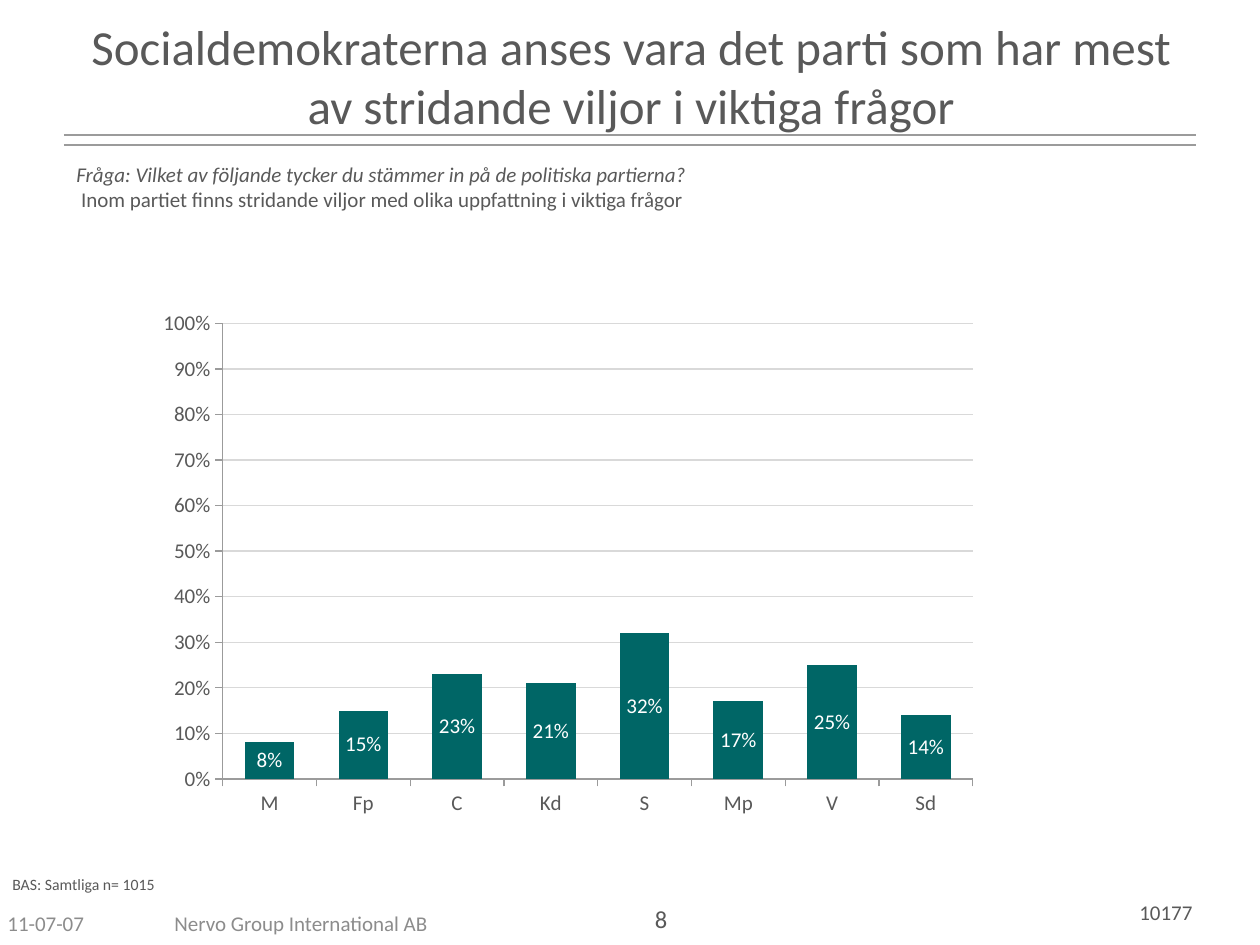
from dataclasses import dataclass

import pptx
import pptx.chart.data
import pptx.dml.color
import pptx.enum.chart
import pptx.enum.shapes
import pptx.enum.text
import pptx.oxml
import pptx.oxml.ns
import pptx.util

SCALE = 914400 / 126  # EMU in one px
Align = pptx.enum.text.PP_ALIGN
Anchor = pptx.enum.text.MSO_ANCHOR


@dataclass(frozen=True)
class Theme:
    face: str = "Calibri"
    ink: str = "595959"
    muted: str = "8C8C8C"
    rule: str = "9B9B9B"
    grid: str = "D9D9D9"
    bar: str = "006666"
    white: str = "FFFFFF"
    title: int = 28
    page: int = 14
    body: int = 12
    note: int = 9


THEME = Theme()


@dataclass(frozen=True)
class Label:
    text: str
    left: int
    top: int
    width: int
    height: int
    size: int = THEME.body
    color: str = THEME.ink
    align: Align = Align.LEFT
    anchor: Anchor = Anchor.TOP


LABELS = [
    Label("10177", 877, 893, 328, 38, align=Align.RIGHT),
    Label("11-07-07", -5, 898, 294, 50, color=THEME.muted, anchor=Anchor.MIDDLE),
    Label("Nervo Group International AB", 101, 898, 400, 50, color=THEME.muted,
          align=Align.CENTER, anchor=Anchor.MIDDLE),
    Label("8", 514, 898, 294, 50, THEME.page, align=Align.CENTER),
    Label("Socialdemokraterna anses vara det parti som har mest "
          "av stridande viljor i viktiga frågor",
          64, 10, 1134, 158, THEME.title, align=Align.CENTER),
    Label("BAS: Samtliga n= 1015", 0, 869, 427, 32, THEME.note),
]
QUERY = Label("Fråga: Vilket av följande tycker du stämmer in på de politiska partierna?",
              64, 155, 1131, 89)
CLAIM = " Inom partiet finns stridande viljor med olika uppfattning i viktiga frågor"
RULES = [135, 145]
SHARES = {"M": 0.08, "Fp": 0.15, "C": 0.23, "Kd": 0.21,
          "S": 0.32, "Mp": 0.17, "V": 0.25, "Sd": 0.14}
PLOT = {"x": 0.071, "y": 0.143, "w": 0.774, "h": 0.729}


def px(count: int) -> int:
    return round(count * SCALE)


def rgb(code: str) -> pptx.dml.color.RGBColor:
    return pptx.dml.color.RGBColor.from_string(code)


def style(font, size: int, color: str) -> None:
    font.name = THEME.face
    font.size = pptx.util.Pt(size)
    font.color.rgb = rgb(color)


def ink(line, color: str, width: float) -> None:
    line.color.rgb = rgb(color)
    line.width = pptx.util.Pt(width)


def write(slide, label: Label):
    """Add a text box and return its paragraph."""
    box = slide.shapes.add_textbox(*map(px, (label.left, label.top, label.width, label.height)))
    frame = box.text_frame
    frame.word_wrap = True
    frame.vertical_anchor = label.anchor
    para = frame.paragraphs[0]
    para.alignment = label.align
    style(para.font, label.size, label.color)
    para.add_run().text = label.text
    return para


def rule(slide, top: int) -> None:
    line = slide.shapes.add_connector(
        pptx.enum.shapes.MSO_CONNECTOR.STRAIGHT, px(64), px(top), px(1196), px(top))
    ink(line.line, THEME.rule, 1.5)
    line._element.spPr.append(pptx.oxml.parse_xml(
        f'<a:effectLst {pptx.oxml.ns.nsdecls("a")}/>'))


def place(chart) -> None:
    """Fix the inner plot area inside the chart frame."""
    area = chart._chartSpace.chart.plotArea
    for old in area.findall(pptx.oxml.ns.qn("c:layout")):
        area.remove(old)
    modes = "".join(f'<c:{key}Mode val="edge"/>' for key in "xy")
    sizes = "".join(f'<c:{key} val="{val}"/>' for key, val in PLOT.items())
    area.insert(0, pptx.oxml.parse_xml(
        f'<c:layout {pptx.oxml.ns.nsdecls("c")}><c:manualLayout>'
        f'<c:layoutTarget val="inner"/>{modes}{sizes}</c:manualLayout></c:layout>'))


def graph(slide) -> None:
    kinds = pptx.enum.chart
    data = pptx.chart.data.CategoryChartData(number_format="0%")
    data.categories = list(SHARES)
    data.add_series("Series 1", list(SHARES.values()))
    chart = slide.shapes.add_chart(
        kinds.XL_CHART_TYPE.COLUMN_STACKED, px(154), px(234), px(969), px(625), data).chart
    chart.has_title = False
    chart.has_legend = False
    style(chart.font, THEME.body, THEME.ink)
    place(chart)

    # Axes
    for axis in (chart.category_axis, chart.value_axis):
        axis.major_tick_mark = kinds.XL_TICK_MARK.OUTSIDE
        axis.minor_tick_mark = kinds.XL_TICK_MARK.NONE
        style(axis.tick_labels.font, THEME.body, THEME.ink)
        ink(axis.format.line, THEME.rule, 0.75)
    scale = chart.value_axis
    scale.minimum_scale, scale.maximum_scale, scale.major_unit = 0, 1, 0.1
    scale.tick_labels.number_format = "0%"
    scale.tick_labels.number_format_is_linked = False
    scale.has_major_gridlines = True
    ink(scale.major_gridlines.format.line, THEME.grid, 0.75)

    # Bars and their values
    plot = chart.plots[0]
    plot.gap_width, plot.overlap = 89, 100
    plot.vary_by_categories = False
    bars = plot.series[0]
    bars.format.fill.solid()
    bars.format.fill.fore_color.rgb = rgb(THEME.bar)
    tags = bars.data_labels
    tags.show_value = True
    tags.number_format = "0%"
    tags.number_format_is_linked = False
    tags.position = kinds.XL_LABEL_POSITION.CENTER
    style(tags.font, THEME.body, THEME.white)


def main() -> None:
    deck = pptx.Presentation()
    deck.slide_width, deck.slide_height = px(1260), px(945)
    slide = deck.slides.add_slide(deck.slide_layouts[6])

    # Double rule under the title
    for top in RULES:
        rule(slide, top)

    graph(slide)

    # Title, footer and notes
    for label in LABELS:
        write(slide, label)

    # Question in italics, then the claim
    para = write(slide, QUERY)
    para.runs[0].font.italic = True
    para.add_line_break()
    para.add_run().text = CLAIM

    deck.save("out.pptx")


if __name__ == "__main__":
    main()
